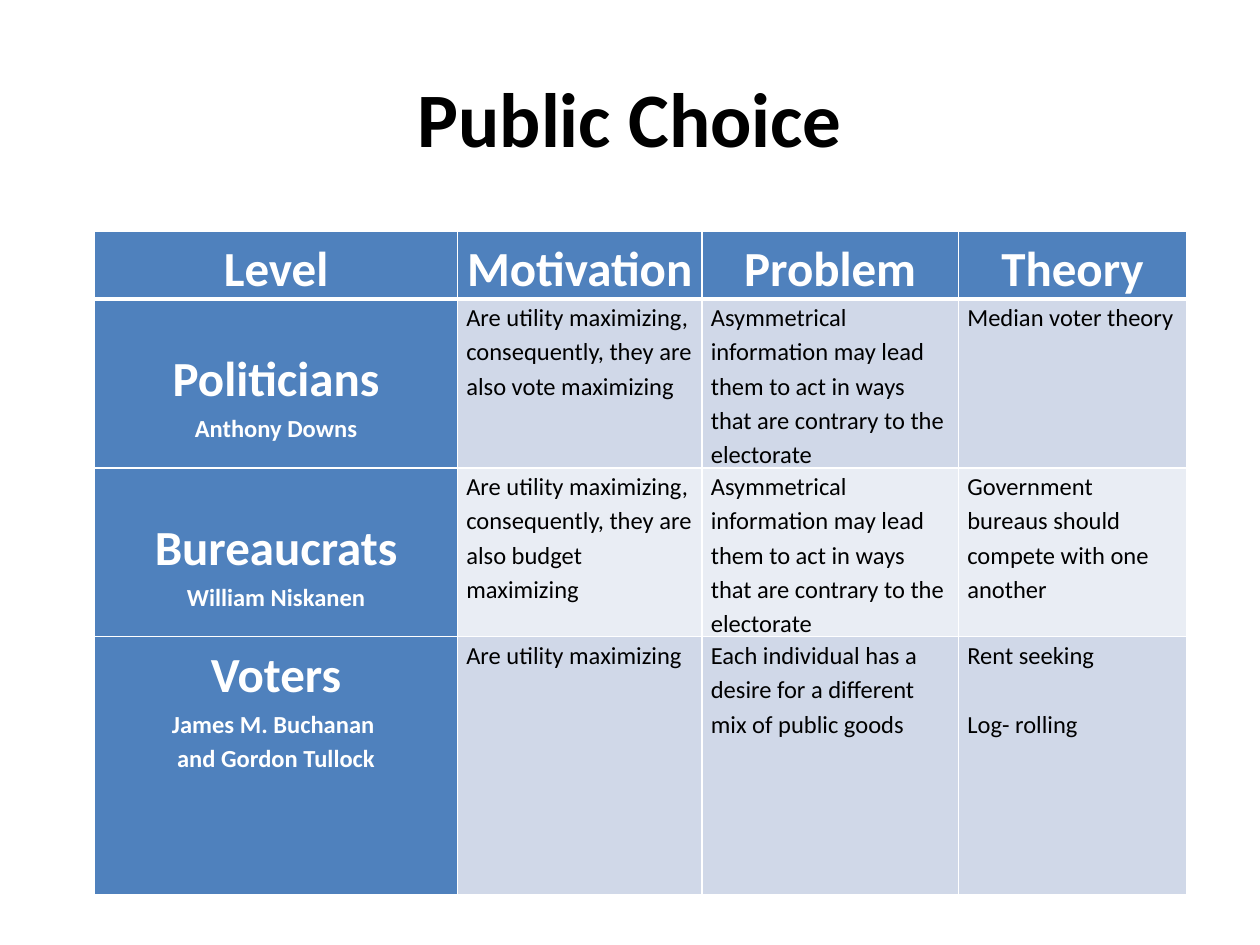
from lxml.etree import SubElement
from pptx import Presentation
from pptx.dml.color import RGBColor
from pptx.enum.text import MSO_ANCHOR, PP_ALIGN
from pptx.oxml.ns import qn
from pptx.util import Cm, Pt

WHITE = RGBColor(0xFF, 0xFF, 0xFF)
BLACK = RGBColor(0, 0, 0)
BLUE = RGBColor(0x4F, 0x81, 0xBD)
BANDS = [RGBColor(0xD0, 0xD8, 0xE8), RGBColor(0xE9, 0xED, 0xF4)]
FONT = "Calibri"
HEADING, BODY = 28, 14

# Content: each cell is a list of paragraphs
TITLE = "Public Choice"
INFORMATION = ("Asymmetrical information may lead them to act in ways "
               "that are contrary to the electorate")
MAXIMIZING = "Are utility maximizing"
ROWS = [
    [["Level"], ["Motivation"], ["Problem"], ["Theory"]],
    [["Politicians", "Anthony Downs"],
     [f"{MAXIMIZING}, consequently, they are also vote maximizing"],
     [INFORMATION],
     ["Median voter theory"]],
    [["Bureaucrats", "William Niskanen"],
     [f"{MAXIMIZING}, consequently, they are also budget maximizing"],
     [INFORMATION],
     ["Government bureaus should compete with one another"]],
    [["Voters", "James M. Buchanan ", "and Gordon Tullock"],
     [MAXIMIZING],
     ["Each individual has a desire for a different mix of public goods"],
     ["Rent seeking", "Log- rolling"]],
]
COLUMN_WIDTHS = [Cm(7.31), Cm(4.93), Cm(5.17), Cm(4.6)]
ROW_HEIGHTS = [Cm(0.89), Cm(3.23), Cm(3.23), Cm(5.21)]
LEVEL_TOP_MARGINS = [Cm(0), Cm(0.84), Cm(0.84), Cm(0)]
THEORY_GAP = Pt(19.6)


def style(paragraph, size, color, bold, alignment):
    paragraph.alignment = alignment
    font = paragraph.font
    font.name, font.size, font.bold = FONT, Pt(size), bold
    font.color.rgb = color


def add_borders(cell, top, bottom):
    properties = cell._tc.get_or_add_tcPr()
    for side, width in (("L", 1), ("R", 1), ("T", top), ("B", bottom)):
        line = SubElement(properties, qn(f"a:ln{side}"), w=str(Pt(width)))
        fill = SubElement(line, qn("a:solidFill"))
        SubElement(fill, qn("a:srgbClr"), val=str(WHITE))


def fill_cell(cell, texts, row, column):
    heading = row == 0 or column == 0
    add_borders(cell, 3 if row == 1 else 1, 3 if row == 0 else 1)
    cell.fill.solid()
    cell.fill.fore_color.rgb = BLUE if heading else BANDS[(row - 1) % 2]
    cell.margin_left = cell.margin_right = Cm(0.18)
    cell.margin_top = LEVEL_TOP_MARGINS[row] if column == 0 else 0
    cell.margin_bottom = 0
    frame = cell.text_frame
    frame.text = "\n".join(texts)
    for index, paragraph in enumerate(frame.paragraphs):
        paragraph.line_spacing = 1.15
        if index and not heading:
            paragraph.space_before = THEORY_GAP
        style(paragraph, HEADING if heading and index == 0 else BODY,
              WHITE if heading else BLACK, heading,
              PP_ALIGN.CENTER if heading else PP_ALIGN.LEFT)


presentation = Presentation()
presentation.slide_width, presentation.slide_height = Cm(25.4), Cm(19.05)
slide = presentation.slides.add_slide(presentation.slide_layouts[6])

# Title
title = slide.shapes.add_textbox(Cm(1.27), Cm(0.76), Cm(22.86), Cm(3.18))
title.text_frame.word_wrap = True
title.text_frame.vertical_anchor = MSO_ANCHOR.MIDDLE
title.text_frame.text = TITLE
style(title.text_frame.paragraphs[0], 44, BLACK, True, PP_ALIGN.CENTER)

# Table of levels
table = slide.shapes.add_table(
    len(ROWS), len(COLUMN_WIDTHS), Cm(1.91), Cm(4.66),
    sum(COLUMN_WIDTHS), sum(ROW_HEIGHTS)).table
table.first_col = True
for column, width in zip(table.columns, COLUMN_WIDTHS):
    column.width = width
for row, height in zip(table.rows, ROW_HEIGHTS):
    row.height = height
for row_index, cells in enumerate(ROWS):
    for column_index, texts in enumerate(cells):
        fill_cell(table.cell(row_index, column_index), texts,
                  row_index, column_index)

presentation.save("out.pptx")
